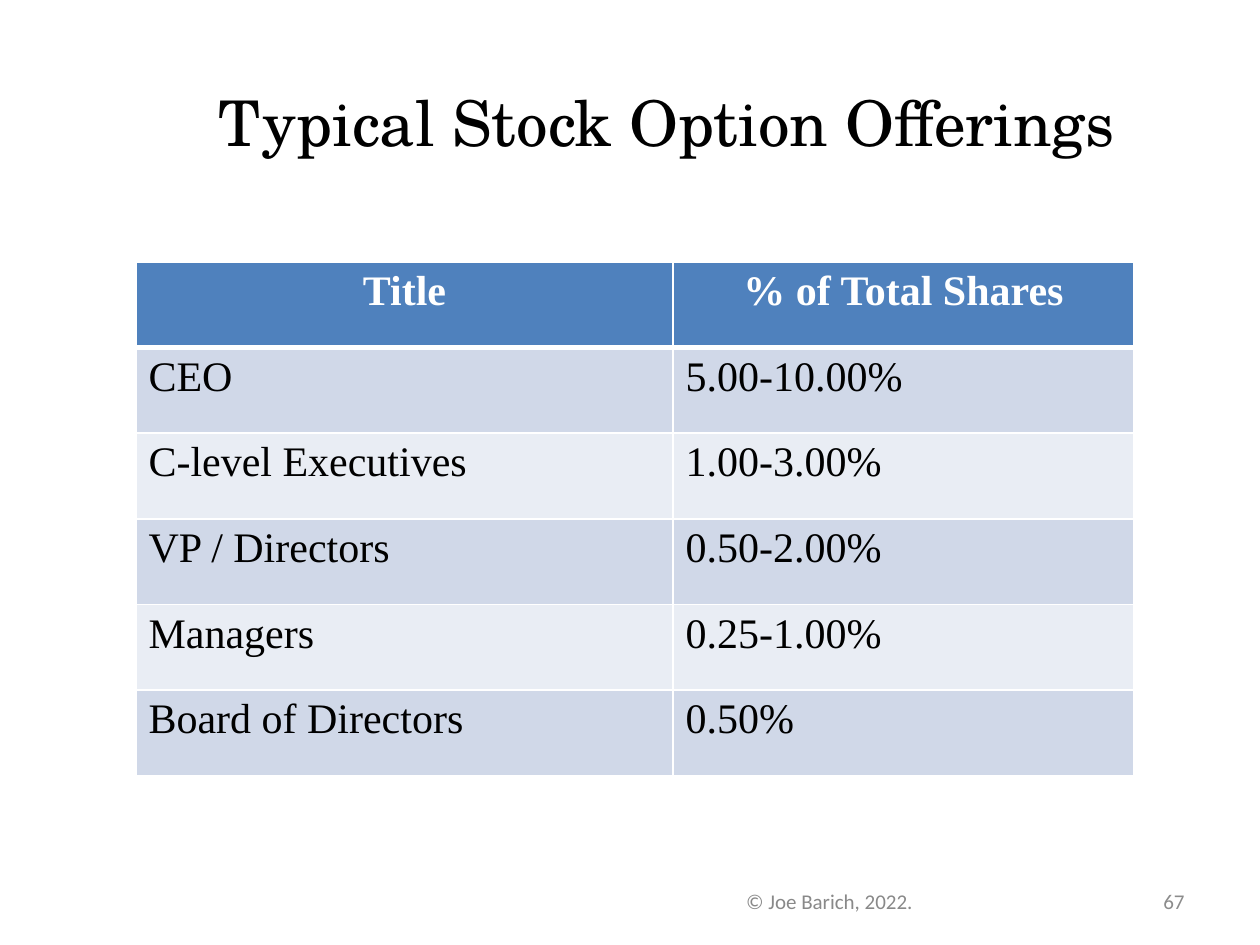
import pptx
import pptx.dml.color
import pptx.enum.text
import pptx.oxml
import pptx.oxml.ns
import pptx.util

EMU_PER_PX = 914400 // 126
ALIGN = pptx.enum.text.PP_ALIGN
ANCHOR = pptx.enum.text.MSO_ANCHOR
COLORS = {
    "black": "000000",
    "white": "FFFFFF",
    "header": "4F81BD",
    "odd_row": "D0D8E8",
    "even_row": "E9EDF4",
    "footer": "898989",
    "number": "8C8C8C",
}
TITLE_FORMAT = {"name": "TeX Gyre Schola", "size": pptx.util.Pt(36), "bold": False}
FOOTER_FORMAT = {"name": "Calibri", "size": pptx.util.Pt(12)}
BODY_FORMAT = {"name": "Times New Roman", "size": pptx.util.Pt(24), "bold": False}
HEADER_FORMAT = {**BODY_FORMAT, "bold": True}
COLUMN_WIDTHS = [537, 461]
OFFERINGS = [
    ("Title", "% of Total Shares"),
    ("CEO", "5.00-10.00%"),
    ("C-level Executives", "1.00-3.00%"),
    ("VP / Directors", "0.50-2.00%"),
    ("Managers", "0.25-1.00%"),
    ("Board of Directors", "0.50%"),
]


def px(length):
    """Turn whole pixels into EMU."""
    return pptx.util.Emu(length * EMU_PER_PX)


def rgb(color):
    """Look up a named colour."""
    return pptx.dml.color.RGBColor.from_string(COLORS[color])


def write_text(text_frame, text, font_format, color, alignment):
    """Fill a text frame with one formatted paragraph."""
    text_frame.word_wrap = True
    paragraph = text_frame.paragraphs[0]
    paragraph.alignment = alignment
    run = paragraph.add_run()
    run.text = text
    for name, value in font_format.items():
        setattr(run.font, name, value)
    run.font.color.rgb = rgb(color)


def set_title(slide, text, box):
    """Place and format the title placeholder."""
    title = slide.shapes.title
    title.left, title.top, title.width, title.height = map(px, box)
    title.text_frame.vertical_anchor = ANCHOR.MIDDLE
    write_text(title.text_frame, text, TITLE_FORMAT, "black", ALIGN.CENTER)


def add_footer(slide, text, box, color, alignment):
    """Add a small text box at the foot of the slide."""
    text_frame = slide.shapes.add_textbox(*map(px, box)).text_frame
    text_frame.vertical_anchor = ANCHOR.MIDDLE
    write_text(text_frame, text, FOOTER_FORMAT, color, alignment)


def set_borders(cell, widths):
    """Draw white cell borders from a dict of side to points."""
    properties = cell._tc.get_or_add_tcPr()
    for side, width in widths.items():
        properties.append(pptx.oxml.parse_xml(
            f'<a:ln{side} {pptx.oxml.ns.nsdecls("a")} w="{pptx.util.Pt(width)}">'
            f'<a:solidFill><a:srgbClr val="{COLORS["white"]}"/></a:solidFill>'
            f'</a:ln{side}>'))


def format_cell(cell, text, row_index):
    """Style one cell by its row."""
    header = row_index == 0
    set_borders(cell, {"L": 1, "R": 1, "T": 3 if row_index == 1 else 1, "B": 3 if header else 1})
    cell.fill.solid()
    if header:
        cell.fill.fore_color.rgb = rgb("header")
        write_text(cell.text_frame, text, HEADER_FORMAT, "white", ALIGN.CENTER)
    else:
        cell.fill.fore_color.rgb = rgb("odd_row" if row_index % 2 else "even_row")
        write_text(cell.text_frame, text, BODY_FORMAT, "black", ALIGN.LEFT)


def add_offerings_table(slide, left, top, height):
    """Add the table of share offerings."""
    table = slide.shapes.add_table(
        len(OFFERINGS), len(COLUMN_WIDTHS),
        px(left), px(top), px(sum(COLUMN_WIDTHS)), px(height)).table
    table.horz_banding = False
    for column, width in zip(table.columns, COLUMN_WIDTHS):
        column.width = px(width)
    for row_index, texts in enumerate(OFFERINGS):
        for column_index, text in enumerate(texts):
            format_cell(table.cell(row_index, column_index), text, row_index)


def main():
    """Build and save the slide."""
    presentation = pptx.Presentation()
    presentation.slide_width = pptx.util.Inches(10)
    presentation.slide_height = pptx.util.Inches(7.5)
    slide = presentation.slides.add_slide(presentation.slide_layouts[5])
    set_title(slide, "Typical Stock Option Offerings", (116, 32, 1102, 179))
    add_footer(slide, "67", (1050, 876, 147, 50), "number", ALIGN.RIGHT)
    add_offerings_table(slide, 136, 262, 514)
    add_footer(slide, "© Joe Barich, 2022.", (630, 876, 399, 50), "footer", ALIGN.CENTER)
    presentation.save("out.pptx")


if __name__ == "__main__":
    main()
